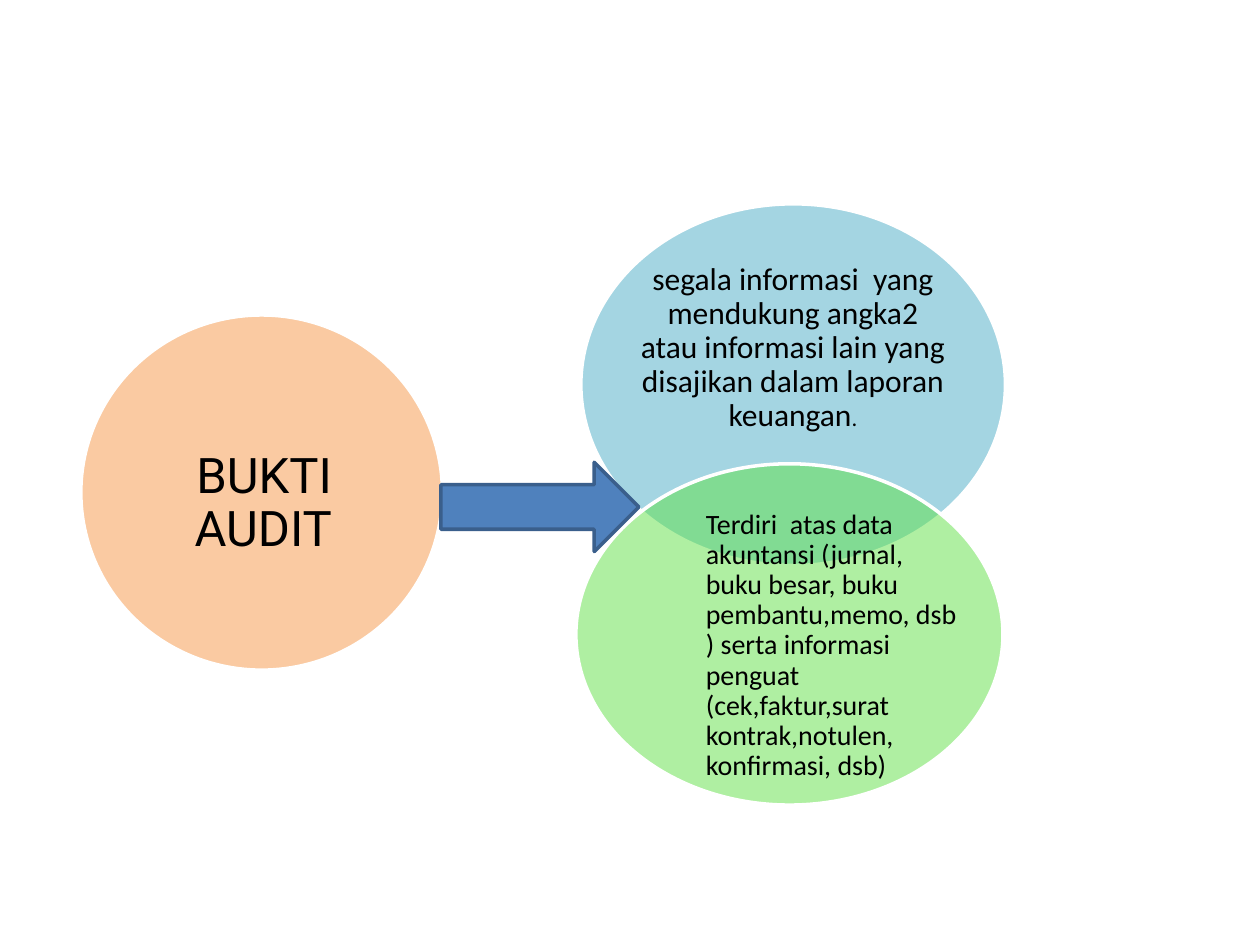
import pptx
import pptx.dml.color
import pptx.enum.shapes
import pptx.enum.text
import pptx.oxml
import pptx.oxml.ns
import pptx.util

Cm, Pt = pptx.util.Cm, pptx.util.Pt
SHAPE = pptx.enum.shapes.MSO_SHAPE
ALIGN = pptx.enum.text.PP_ALIGN
COLORS = {"blue": "4BACC6", "green": "60E146", "orange": "F79646",
          "arrow": "4F81BD", "arrow_line": "3A5F8C", "white": "FFFFFF", "black": "000000"}


def rgb(name):
    """Return the named colour."""
    return pptx.dml.color.RGBColor.from_string(COLORS[name])


def add_shape(s, kind, box, fill, line, alpha=None):
    """Draw a filled, outlined shape in box, with optional opacity in percent."""
    sp = s.shapes.add_shape(kind, *(Cm(v) for v in box))
    sp.shadow.inherit = False
    sp.fill.solid()
    sp.fill.fore_color.rgb = rgb(fill)
    sp.line.color.rgb = rgb(line)
    sp.line.width = Pt(2)
    if alpha:
        clr = sp.fill._xPr.find(".//" + pptx.oxml.ns.qn("a:srgbClr"))
        clr.append(pptx.oxml.parse_xml(
            f'<a:alpha {pptx.oxml.ns.nsdecls("a")} val="{alpha * 1000}"/>'))


def add_circle(s, box, fill, inset, align, font, runs):
    """Draw a translucent ellipse in box with its text at inset within it."""
    add_shape(s, SHAPE.OVAL, box, fill, "white", 50)
    left, top, width, height = inset
    tb = s.shapes.add_textbox(Cm(box[0] + left), Cm(box[1] + top), Cm(width), Cm(height))
    tf = tb.text_frame
    frame = {"word_wrap": True, "vertical_anchor": pptx.enum.text.MSO_ANCHOR.MIDDLE,
             "margin_left": 0, "margin_top": 0, "margin_right": 0, "margin_bottom": 0}
    for name, value in frame.items():
        setattr(tf, name, value)
    p = tf.paragraphs[0]
    for name, value in {"alignment": align, "line_spacing": 0.9}.items():
        setattr(p, name, value)
    for text, size in runs:
        r = p.add_run()
        r.text = text
        for name, value in {"name": font, "size": Pt(size)}.items():
            setattr(r.font, name, value)
        r.font.color.rgb = rgb("black")


def add_definition(s, box):
    """Place the two overlapping ellipses that explain audit evidence."""
    left, top, width, height = box
    add_circle(s, (left + 0.1, top, width - 0.1, 7.29), "blue", (1.14, 1.27, 6.27, 3.28),
               ALIGN.CENTER, "Calibri",
               [("segala informasi  yang mendukung angka2 atau informasi lain yang "
                 "disajikan dalam laporan keuangan", 18), (".", 13)])
    add_circle(s, (left, top + height - 6.88, width - 0.05, 6.88), "green",
               (2.62, 1.78, 5.16, 3.78), ALIGN.LEFT, "Calibri",
               [("Terdiri  atas data akuntansi (jurnal, buku besar, buku pembantu,memo, dsb ) "
                 "serta informasi penguat (cek,faktur,surat kontrak,notulen, konfirmasi, dsb)", 16)])


def add_topic(s, box):
    """Place the topic circle."""
    add_circle(s, box, "orange", (0.69, 1.85, 4.37, 3.94), ALIGN.RIGHT, "Roboto",
               [("BUKTI AUDIT", 28)])


def main():
    """Build and save the slide."""
    prs = pptx.Presentation()
    prs.slide_width, prs.slide_height = Cm(25.4), Cm(19.05)
    s = prs.slides.add_slide(prs.slide_layouts[6])
    add_definition(s, (11.61, 4.11, 8.66, 12.12))
    add_topic(s, (1.63, 6.35, 7.29, 7.16))
    add_shape(s, SHAPE.RIGHT_ARROW, (8.89, 9.32, 3.99, 1.8), "arrow", "arrow_line")
    prs.save("out.pptx")


if __name__ == "__main__":
    main()
